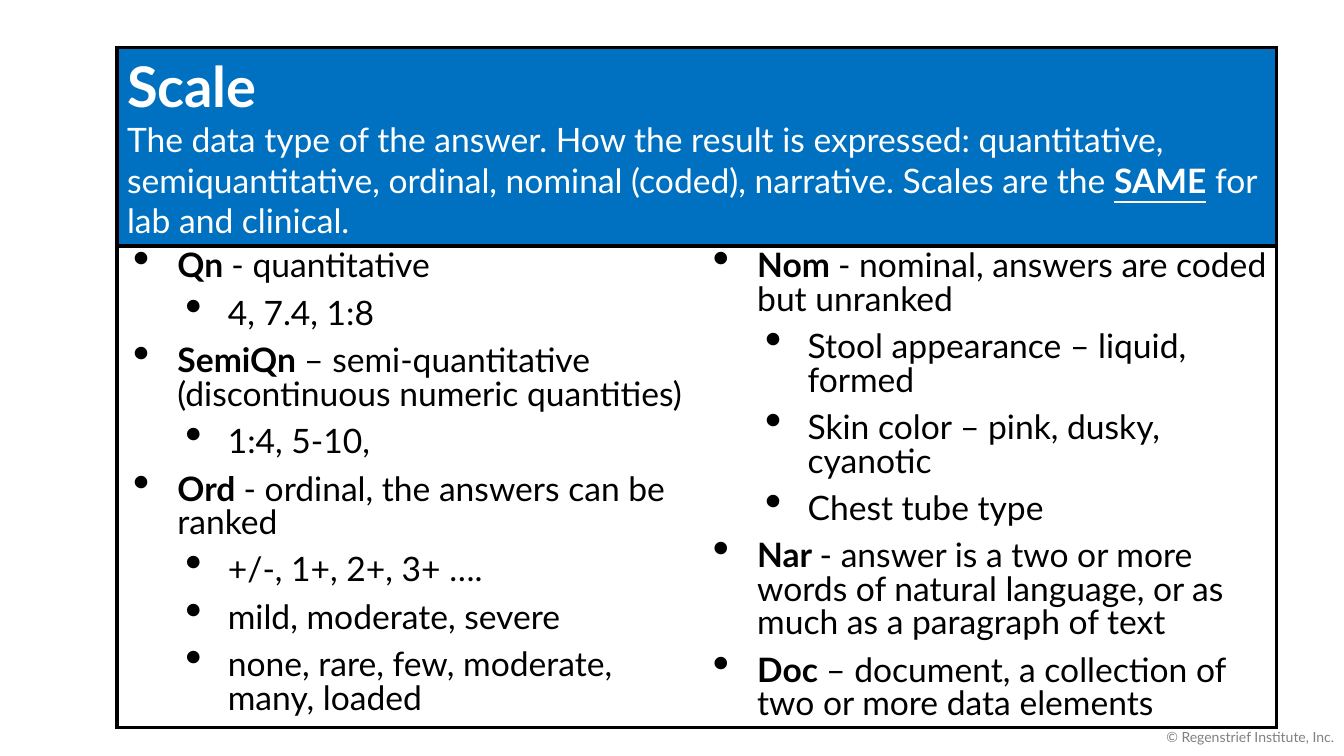
from lxml import etree
from pptx import Presentation
from pptx.dml.color import RGBColor
from pptx.enum.text import MSO_ANCHOR, PP_ALIGN
from pptx.oxml.ns import qn
from pptx.util import Inches, Pt

MIDDLE = MSO_ANCHOR.MIDDLE
RIGHT = PP_ALIGN.RIGHT
FONT = "Lato"
BLANK = 6
HEX = {"blue": "0070C0", "white": "FFFFFF", "black": "000000", "gray": "808080"}

# Indent and hanging first line for each list level, in inches
INDENT = [(0.5, -0.44), (1, -0.42)]

# List entries: level, bold term, plain text
LEFT = [
    (0, "Qn ", "- quantitative"),
    (1, "", "4, 7.4, 1:8"),
    (0, "SemiQn ", "– semi-quantitative (discontinuous numeric quantities)"),
    (1, "", "1:4, 5-10,"),
    (0, "Ord ", "- ordinal, the answers can be ranked"),
    (1, "", "+/-, 1+, 2+, 3+ …."),
    (1, "", "mild, moderate, severe"),
    (1, "", "none, rare, few, moderate, many, loaded"),
]
NOMINAL = [
    (0, "Nom ", "- nominal, answers are coded but unranked"),
    (1, "", "Stool appearance – liquid, formed"),
    (1, "", "Skin color – pink, dusky, cyanotic"),
    (1, "", "Chest tube type"),
    (0, "Nar ", "- answer is a two or more words of natural language, "
                "or as much as a paragraph of text"),
    (0, "Doc ", "– document, a collection of two or more data elements"),
]


def color(name):
    return RGBColor.from_string(HEX[name])


def add_text(para, text, size=24, ink="black", bold=False, under=False):
    run = para.add_run()
    run.text = text
    font = run.font
    font.name, font.size = FONT, Pt(size)
    font.bold, font.underline = bold, under
    font.color.rgb = color(ink)


def add_bullet(para, level):
    left, hang = INDENT[level]
    props = para._p.get_or_add_pPr()
    props.set("marL", str(Inches(left)))
    props.set("indent", str(Inches(hang)))
    tint = etree.SubElement(props, qn("a:buClr"))
    etree.SubElement(tint, qn("a:srgbClr"), val=HEX["black"])
    etree.SubElement(props, qn("a:buSzPct"), val="143000")
    etree.SubElement(props, qn("a:buChar"), char="•")


def fill_list(cell, items):
    frame = cell.text_frame
    for i, (level, term, text) in enumerate(items):
        para = frame.add_paragraph() if i else frame.paragraphs[0]
        para.level = level
        para.line_spacing = 0.83
        para.space_before = Pt(10 if i else 0)
        add_bullet(para, level)
        if term:
            add_text(para, term, bold=True)
        add_text(para, text)


def style_cell(cell, fill, sides):
    props = cell._tc.get_or_add_tcPr()
    for side in "LRTB":
        line = etree.SubElement(props, qn("a:ln" + side), w=str(Pt(3)))
        if side in sides:
            solid = etree.SubElement(line, qn("a:solidFill"))
            etree.SubElement(solid, qn("a:srgbClr"), val=HEX["black"])
        else:
            etree.SubElement(line, qn("a:noFill"))
    cell.fill.solid()
    cell.fill.fore_color.rgb = color(fill)


def fill_head(cell):
    cell.vertical_anchor = MIDDLE
    frame = cell.text_frame
    add_text(frame.paragraphs[0], "Scale", size=40, ink="white", bold=True)
    para = frame.add_paragraph()
    add_text(para, "The data type of the answer. How the result is expressed: "
             "quantitative, semiquantitative, ordinal, nominal (coded), "
             "narrative. Scales are the ", ink="white")
    add_text(para, "SAME", ink="white", bold=True, under=True)
    add_text(para, " for lab and clinical.", ink="white")


def add_grid(slide):
    frame = slide.shapes.add_table(2, 2, Inches(1.16), Inches(0.47),
                                   Inches(11.5), Inches(6.7))
    table = frame.table
    table.first_row = table.horz_banding = False
    for row, height in zip(table.rows, (1.97, 4.73)):
        row.height = Inches(height)

    # Header across both columns
    head = table.cell(0, 0)
    head.merge(table.cell(0, 1))
    for col in range(2):
        style_cell(table.cell(0, col), "blue", "LRTB")
    fill_head(head)

    # Two lists inside one outer border
    for col, (items, sides) in enumerate([(LEFT, "LTB"), (NOMINAL, "RTB")]):
        cell = table.cell(1, col)
        style_cell(cell, "white", sides)
        fill_list(cell, items)


def add_foot(slide):
    box = slide.shapes.add_textbox(Inches(10.33), Inches(7.11),
                                   Inches(3), Inches(0.4))
    frame = box.text_frame
    frame.word_wrap = True
    frame.vertical_anchor = MIDDLE
    para = frame.paragraphs[0]
    para.alignment = RIGHT
    add_text(para, "© Regenstrief Institute, Inc.", size=10, ink="gray")


def main():
    deck = Presentation()
    deck.slide_width, deck.slide_height = Inches(13.33), Inches(7.5)
    slide = deck.slides.add_slide(deck.slide_layouts[BLANK])
    add_grid(slide)
    add_foot(slide)
    deck.save("out.pptx")


if __name__ == "__main__":
    main()
